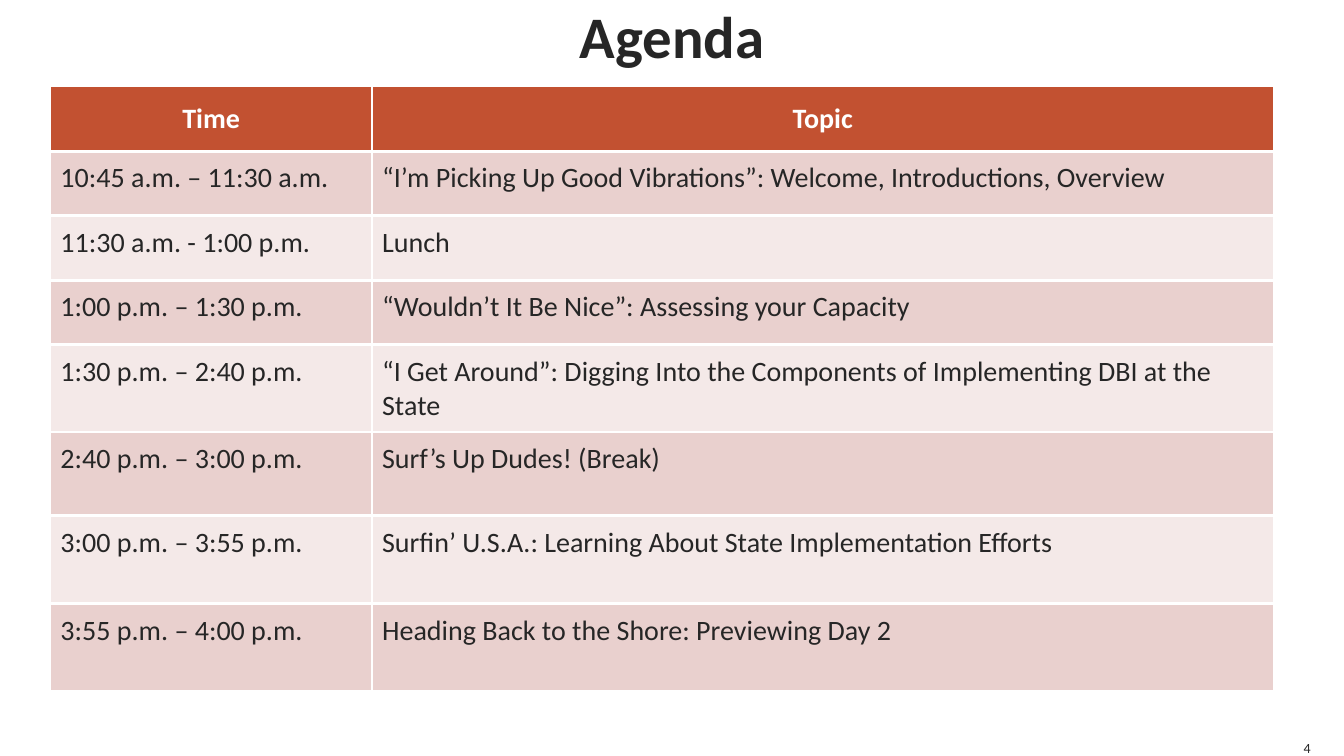
from lxml.etree import SubElement
from pptx import Presentation
from pptx.dml.color import RGBColor
from pptx.enum.text import MSO_ANCHOR, PP_ALIGN
from pptx.oxml.ns import qn
from pptx.util import Inches, Pt

TITLE = "Agenda"
PAGE_NUMBER = "4"
AGENDA = [
    ("Time", "Topic"),
    ("10:45 a.m. – 11:30 a.m.", "“I’m Picking Up Good Vibrations”: Welcome, Introductions, Overview"),
    ("11:30 a.m. - 1:00 p.m.", "Lunch"),
    ("1:00 p.m. – 1:30 p.m.", "“Wouldn’t It Be Nice”: Assessing your Capacity"),
    ("1:30 p.m. – 2:40 p.m.", "“I Get Around”: Digging Into the Components of Implementing DBI at the State"),
    ("2:40 p.m. – 3:00 p.m.", "Surf’s Up Dudes! (Break)"),
    ("3:00 p.m. – 3:55 p.m.", "Surfin’ U.S.A.: Learning About State Implementation Efforts"),
    ("3:55 p.m. – 4:00 p.m.", "Heading Back to the Shore: Previewing Day 2"),
]
COLUMNS = [3.19, 8.94]
ROWS = [0.64] * 4 + [0.83] * 2 + [0.87] * 2
MARGIN, TABLE_TOP = 0.5, 0.86
WIDTH, HEIGHT = 13.33, 7.5
INK, WHITE, HEADER = "262626", "FFFFFF", "C25131"
BANDS = ["F4E9E8", "E9D0CE"]
SIDES = ("left", "top", "right", "bottom")


def color(value):
    return RGBColor.from_string(value)


def write(para, text, size, ink=INK, bold=False, align=PP_ALIGN.LEFT):
    para.alignment = align
    span = para.add_run()
    span.text = text
    for name, value in {"name": "Calibri", "size": Pt(size), "bold": bold}.items():
        setattr(span.font, name, value)
    span.font.color.rgb = color(ink)


def add_label(page, area, text, size, anchor, **style):
    frame = page.shapes.add_textbox(*map(Inches, area)).text_frame
    frame.word_wrap = True
    frame.vertical_anchor = anchor
    for side in SIDES:
        setattr(frame, f"margin_{side}", 0)
    write(frame.paragraphs[0], text, size, **style)


def set_borders(cell, widths):
    properties = cell._tc.get_or_add_tcPr()
    for index, (tag, width) in enumerate(widths.items()):
        line = properties.makeelement(qn(f"a:{tag}"), {"w": str(Pt(width))})
        fill = SubElement(line, qn("a:solidFill"))
        SubElement(fill, qn("a:srgbClr"), val=WHITE)
        properties.insert(index, line)


def add_agenda(page):
    area = (MARGIN, TABLE_TOP, sum(COLUMNS), sum(ROWS))
    table = page.shapes.add_table(len(ROWS), len(COLUMNS), *map(Inches, area)).table
    for column, width in zip(table.columns, COLUMNS):
        column.width = Inches(width)
    for row, (height, entries) in enumerate(zip(ROWS, AGENDA)):
        table.rows[row].height = Inches(height)
        heading = row == 0
        for col, text in enumerate(entries):
            cell = table.cell(row, col)
            for side in SIDES:
                setattr(cell, f"margin_{side}", Inches(0.1))
            cell.vertical_anchor = MSO_ANCHOR.MIDDLE if heading else MSO_ANCHOR.TOP
            cell.fill.solid()
            cell.fill.fore_color.rgb = color(HEADER if heading else BANDS[row % 2])
            set_borders(cell, {
                "lnL": 2.25 if col else 1,
                "lnR": 1 if col else 2.25,
                "lnT": 1 if heading else 2.25,
                "lnB": 2.25,
            })
            write(cell.text_frame.paragraphs[0], text, 20,
                  ink=WHITE if heading else INK, bold=heading,
                  align=PP_ALIGN.CENTER if heading else PP_ALIGN.LEFT)


def main():
    deck = Presentation()
    deck.slide_width, deck.slide_height = Inches(WIDTH), Inches(HEIGHT)
    page = deck.slides.add_slide(deck.slide_layouts[6])
    add_label(page, (MARGIN, -0.35, WIDTH - 2 * MARGIN, 1.4), TITLE, 42,
              MSO_ANCHOR.MIDDLE, bold=True, align=PP_ALIGN.CENTER)
    add_agenda(page)
    add_label(page, (WIDTH - MARGIN, HEIGHT - 0.17, 0.17, 0.17), PAGE_NUMBER, 10,
              MSO_ANCHOR.BOTTOM, align=PP_ALIGN.RIGHT)
    deck.save("out.pptx")


if __name__ == "__main__":
    main()
